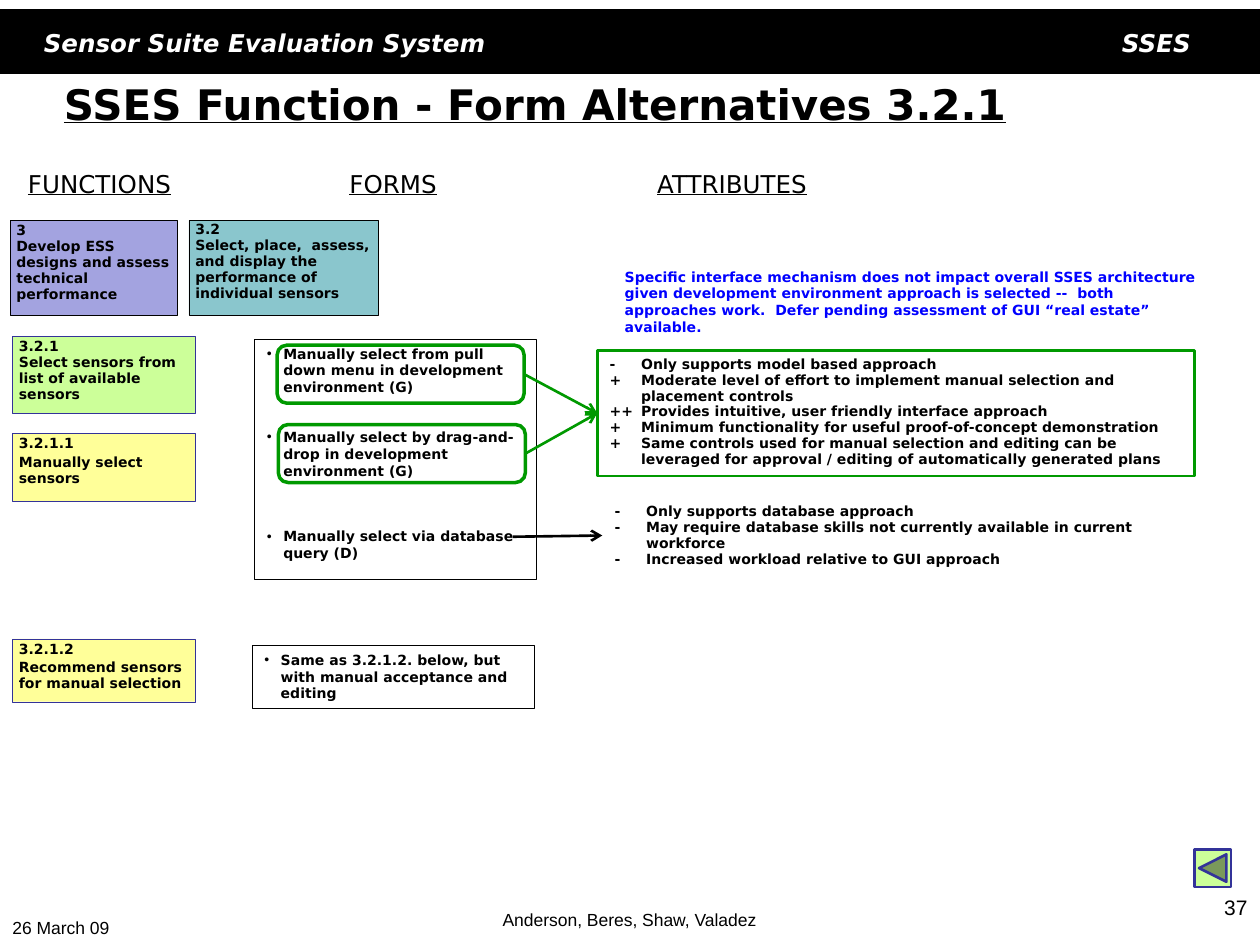
from dataclasses import dataclass

import lxml.etree
import pptx
import pptx.dml.color
import pptx.enum.shapes
import pptx.enum.text
import pptx.oxml.ns
import pptx.util

Inches = pptx.util.Inches
Pt = pptx.util.Pt
Shape = pptx.enum.shapes.MSO_SHAPE
Align = pptx.enum.text.PP_ALIGN
Anchor = pptx.enum.text.MSO_ANCHOR

COLORS = {
    "black": "000000", "white": "FFFFFF", "blue": "0000FF", "green": "009900",
    "navy": "333399", "teal": "8AC6CD", "lavender": "A3A3E0",
    "lime": "CCFF99", "yellow": "FFFF99",
}
BODY_FONT = "DejaVu Sans"
FOOTER_FONT = "Arial"


@dataclass
class Box:
    left: float
    top: float
    width: float
    height: float


@dataclass
class TextStyle:
    size: float = 8
    font: str = BODY_FONT
    color: str = "black"
    bold: bool = False
    italic: bool = False
    underline: bool = False
    align: Align = Align.LEFT
    anchor: Anchor = Anchor.TOP
    line_spacing: float = 1.0
    hanging: float = 0
    bullet: str = ""


@dataclass
class FunctionCard:
    box: Box
    number: str
    title: str
    fill: str
    line: str = "navy"
    inset: float = 0.02
    gap: float = 0


def rgb(name: str):
    return pptx.dml.color.RGBColor.from_string(COLORS[name])


def add_child(parent, tag: str, **attributes: str):
    return lxml.etree.SubElement(parent, pptx.oxml.ns.qn(tag), **attributes)


def write_text(shape, lines: list[str], style: TextStyle, gaps: tuple = ()) -> None:
    """Fill a shape with paragraphs; gaps gives the points before each one."""
    text_frame = shape.text_frame
    text_frame.word_wrap = True
    text_frame.vertical_anchor = style.anchor
    text_frame.text = "\n".join(lines)
    for index, paragraph in enumerate(text_frame.paragraphs):
        paragraph.alignment = style.align
        paragraph.line_spacing = style.line_spacing
        paragraph.space_before = Pt(gaps[index] if gaps else 0)
        properties = paragraph._p.get_or_add_pPr()
        if style.hanging:
            properties.set("marL", str(Inches(style.hanging)))
            properties.set("indent", str(-Inches(style.hanging)))
        if style.bullet:
            add_child(properties, "a:buFont", typeface=FOOTER_FONT)
            add_child(properties, "a:buChar", char=style.bullet)
        for run in paragraph.runs:
            font = run.font
            font.name, font.size = style.font, Pt(style.size)
            font.bold, font.italic = style.bold, style.italic
            font.underline = style.underline
            font.color.rgb = rgb(style.color)


def add_text(slide, box: Box, lines: list[str], style: TextStyle):
    shape = slide.shapes.add_textbox(
        Inches(box.left), Inches(box.top), Inches(box.width), Inches(box.height))
    write_text(shape, lines, style)
    return shape


def add_box(slide, box: Box, line: str, line_width: float, fill: str = "",
            kind: Shape = Shape.RECTANGLE):
    shape = slide.shapes.add_shape(
        kind, Inches(box.left), Inches(box.top), Inches(box.width), Inches(box.height))
    shape.shadow.inherit = False
    shape.line.color.rgb = rgb(line)
    shape.line.width = Pt(line_width)
    if fill:
        shape.fill.solid()
        shape.fill.fore_color.rgb = rgb(fill)
    else:
        shape.fill.background()
    return shape


def add_function_card(slide, card: FunctionCard) -> None:
    shape = add_box(slide, card.box, card.line, 0.25, card.fill)
    text_frame = shape.text_frame
    text_frame.margin_left, text_frame.margin_right = Inches(0.05), Inches(0.02)
    text_frame.margin_top = text_frame.margin_bottom = Inches(card.inset)
    write_text(shape, [card.number, card.title],
               TextStyle(bold=True, line_spacing=0.95), (0, card.gap))


def add_arrow(slide, start: tuple, end: tuple, color: str):
    arrow = slide.shapes.add_connector(
        pptx.enum.shapes.MSO_CONNECTOR.STRAIGHT, *map(Inches, start + end))
    arrow.line.color.rgb = rgb(color)
    arrow.line.width = Pt(1.5)
    add_child(arrow.line._get_or_add_ln(), "a:tailEnd", type="arrow")
    add_child(arrow._element.spPr, "a:effectLst")
    return arrow


FUNCTION_CARDS = [
    FunctionCard(Box(1.5, 1.75, 1.5, 0.75), "3.2",
                 "Select, place,  assess, and display the performance of individual sensors",
                 "teal", "black", inset=0.01),
    FunctionCard(Box(0.08, 1.75, 1.33, 0.75), "3",
                 "Develop ESS designs and assess technical performance",
                 "lavender", "black"),
    FunctionCard(Box(0.1, 2.67, 1.45, 0.61), "3.2.1",
                 "Select sensors from list of available sensors", "lime"),
    FunctionCard(Box(0.1, 3.44, 1.45, 0.54), "3.2.1.1",
                 "Manually select sensors", "yellow", gap=1.6),
    FunctionCard(Box(0.1, 5.07, 1.45, 0.5), "3.2.1.2",
                 "Recommend sensors for manual selection", "yellow", gap=1.6),
]
HEADINGS = [
    ("FUNCTIONS", Box(0.03, 1.29, 1.52, 0.34)),
    ("FORMS", Box(2, 1.29, 2.24, 0.34)),
    ("ATTRIBUTES", Box(4.69, 1.29, 2.24, 0.34)),
]
FORMS = [
    "Manually select from pull down menu in development environment (G)",
    "Manually select by drag-and-drop in development environment (G)",
    "Manually select via database query (D)",
]
GUI_ATTRIBUTES = [
    "-\tOnly supports model based approach",
    "+\tModerate level of effort to implement manual selection and placement controls",
    "++\tProvides intuitive, user friendly interface approach",
    "+\tMinimum functionality for useful proof-of-concept demonstration",
    "+\tSame controls used for manual selection and editing can be leveraged for "
    "approval / editing of automatically generated plans",
]
DATABASE_ATTRIBUTES = [
    "-\tOnly supports database approach",
    "-\tMay require database skills not currently available in current workforce",
    "-\tIncreased workload relative to GUI approach",
]
INTERFACE_NOTE = (
    "Specific interface mechanism does not impact overall SSES architecture given "
    "development environment approach is selected --  both approaches work.  Defer "
    "pending assessment of GUI “real estate” available.")


def main() -> None:
    presentation = pptx.Presentation()
    presentation.slide_width, presentation.slide_height = Inches(10), Inches(7.5)
    slide = presentation.slides.add_slide(presentation.slide_layouts[6])

    add_box(slide, Box(0, 0.08, 10, 0.5), "black", 0.75, "black")
    for text, box, align in [
        ("Sensor Suite Evaluation System", Box(0.25, 0.17, 6, 0.33), Align.LEFT),
        ("SSES", Box(8.05, 0.17, 1.5, 0.33), Align.RIGHT),
    ]:
        add_text(slide, box, [text], TextStyle(
            14, color="white", bold=True, italic=True, align=align))
    add_text(slide, Box(0.41, 0.49, 9, 0.67), ["SSES Function - Form Alternatives 3.2.1"],
             TextStyle(24, bold=True, underline=True, anchor=Anchor.MIDDLE))
    for text, box in HEADINGS:
        add_text(slide, box, [text], TextStyle(14, underline=True, align=Align.CENTER))

    for card in FUNCTION_CARDS:
        add_function_card(slide, card)

    bullets = TextStyle(bold=True, hanging=0.13, bullet="•")
    forms = add_box(slide, Box(2.02, 2.69, 2.24, 1.91), "black", 0.25)
    write_text(forms, FORMS, bullets, (0, 19, 28))
    same_form = add_box(slide, Box(2, 5.12, 2.24, 0.5), "black", 0.25)
    write_text(same_form, ["Same as 3.2.1.2. below, but with manual acceptance and editing"],
               bullets)

    add_text(slide, Box(4.86, 2.08, 4.76, 0.64), [INTERFACE_NOTE],
             TextStyle(color="blue", bold=True))
    attribute_style = TextStyle(bold=True, line_spacing=0.95, hanging=0.25)
    gui_box = add_box(slide, Box(4.74, 2.78, 4.74, 1), "green", 1.5)
    write_text(gui_box, GUI_ATTRIBUTES, attribute_style)
    add_text(slide, Box(4.78, 3.95, 4.7, 0.61), DATABASE_ATTRIBUTES, attribute_style)

    for left, top in [(2.2, 2.74), (2.21, 3.37)]:
        highlight = add_box(slide, Box(left, top, 1.96, 0.46), "green", 2,
                            kind=Shape.ROUNDED_RECTANGLE)
        arrow = add_arrow(slide, (left + 1.96, top + 0.23), (4.74, 3.28), "green")
        arrow.begin_connect(highlight, 3)
        arrow.end_connect(gui_box, 1)
    add_arrow(slide, (4.07, 4.26), (4.78, 4.25), "black")

    add_box(slide, Box(9.48, 6.74, 0.29, 0.3), "navy", 1.5, "lime",
            Shape.ACTION_BUTTON_BACK_OR_PREVIOUS)
    for text, box, size, align, anchor in [
        ("26 March 09", Box(0, 7.23, 1.57, 0.27), 10, Align.LEFT, Anchor.TOP),
        ("Anderson, Beres, Shaw, Valadez", Box(3.15, 7.08, 3.69, 0.35), 10,
         Align.CENTER, Anchor.BOTTOM),
        ("37", Box(7.67, 7.05, 2.33, 0.45), 12, Align.RIGHT, Anchor.TOP),
    ]:
        add_text(slide, box, [text], TextStyle(size, FOOTER_FONT, align=align, anchor=anchor))

    presentation.save("out.pptx")


if __name__ == "__main__":
    main()
